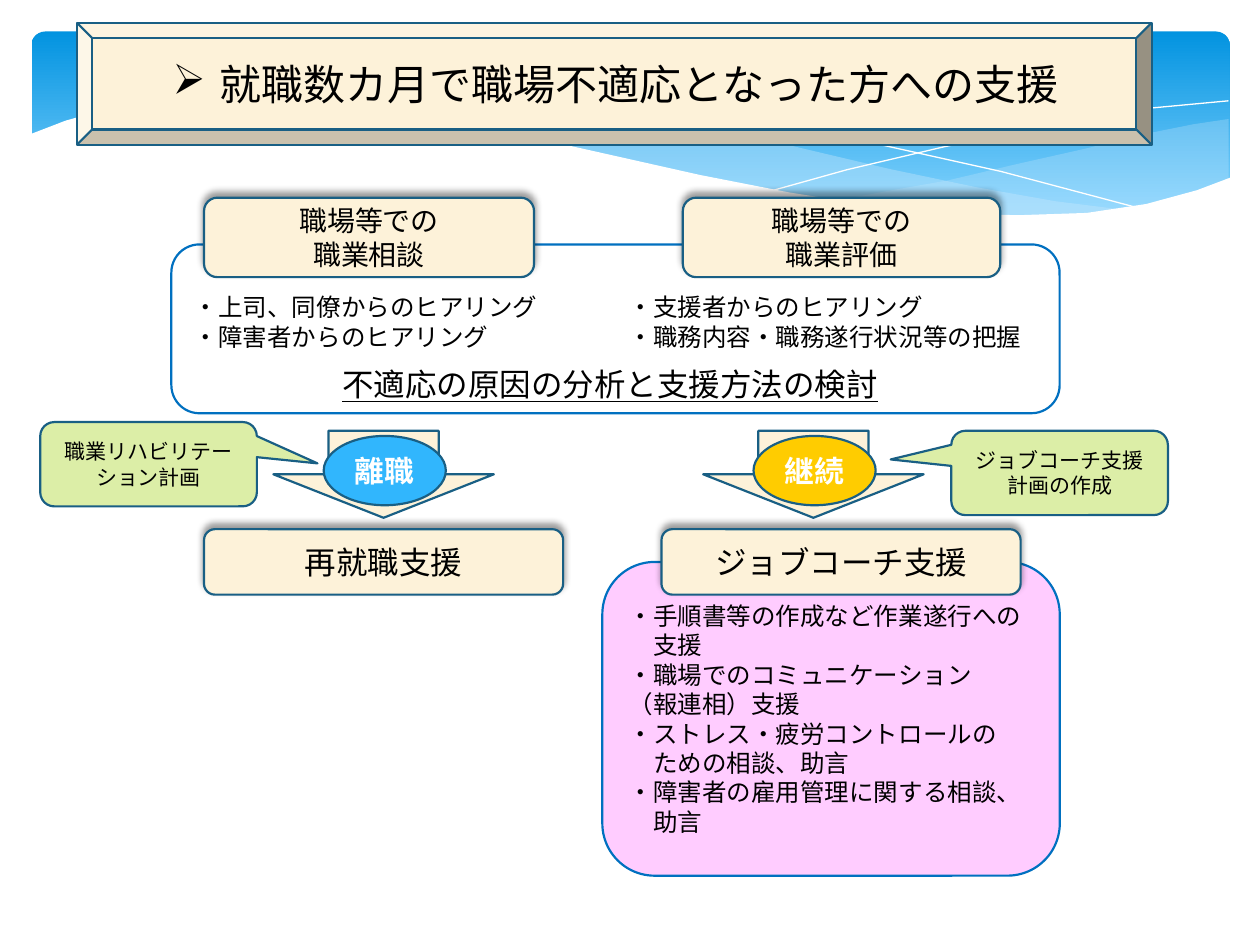
from lxml import etree
from pptx import Presentation
from pptx.dml.color import RGBColor
from pptx.enum import shapes, text
from pptx.oxml import ns
from pptx.util import Pt

FONT = "Noto Sans CJK JP"
CREAM, LIME, PINK, WHITE, BLACK = "FDF2D9", "DCEEA7", "FFCCFF", "FFFFFF", "000000"
OUTLINE, FRAME_LINE = "195F84", "0070C0"
KIND = shapes.MSO_SHAPE
CENTER, LEFT = text.PP_ALIGN.CENTER, text.PP_ALIGN.LEFT

# Every place is (left, top, width, height) in points.
TITLE = "就職数カ月で職場不適応となった方への支援"
BANNER = (18, 18, 684.7, 112.3)
RIGHT_WAVE = [
    (702, 68), (682, 71), (652, 77), (620, 85), (580, 94), (542, 103), (508, 109),
    (476, 115), (508, 118.8), (545, 122.4), (586, 123.8), (621, 122.4), (652, 117.4),
    (683, 109.5), (702, 102)]
MIDDLE_WAVE = [
    (643, 120), (603, 115), (558, 107), (508, 96.5), (453, 83.5), (420, 76), (390, 70),
    (361, 65), (318, 60), (274, 57.6), (236, 58), (206, 62), (233, 65), (261, 70),
    (291, 76), (323, 83.5), (382, 97), (433, 108), (468, 114), (510, 119.5),
    (557, 123.5), (596, 124.6), (631, 122.5)]
WAVE_LINES = [
    [(222.5, 65), (236, 62), (261, 59.5), (300, 58.5), (338, 59.8), (384, 63.4),
     (438, 70.6), (500, 82), (572, 98), (653, 119.5)],
    [(441, 109), (484, 97), (539, 84), (602, 71), (655, 62), (702, 57.6)]]
WHITE_WAVE = [
    (703, 101.5), (684, 108.7), (655, 116.6), (621, 121.7), (582, 123), (536, 122),
    (495, 117), (451, 110), (400, 100), (342, 87), (281, 73.4), (228, 63.4),
    (180, 58.3), (139, 56), (105, 57), (76, 60), (55, 64), (37.4, 69), (26, 73.4),
    (16.6, 77), (16.6, 161), (703, 161)]

ANALYSIS_FRAME = (97.9, 139.7, 507.6, 96.5)
COACHING_FRAME = (344.2, 321.1, 261.4, 179.3)
ANALYSIS_HEADINGS = [
    ((116.6, 113, 188.6, 45.4), ["職場等での", "職業相談"]),
    ((390.2, 113, 181.4, 45.4), ["職場等での", "職業評価"])]
SUPPORT_HEADINGS = [
    ((116.6, 302.4, 205.2, 37.4), ["再就職支援"]),
    ((378, 302.4, 205.2, 37.4), ["ジョブコーチ支援"])]
CALLOUTS = [  # left, top, tip x, tip y, words
    (23, 241.2, 0.78, -0.01, "職業リハビリテーション計画"),
    (543.6, 246.2, -0.78, -0.16, "ジョブコーチ支援計画の作成")]
OUTCOMES = [(156.2, "31B6FD", "離職"), (401.8, "FFCC00", "継続")]  # arrow left
NOTES = [
    ((352.1, 163.4, 244.8, 41),
     ["・支援者からのヒアリング", "・職務内容・職務遂行状況等の把握"]),
    ((103.7, 163.4, 239.8, 41),
     ["・上司、同僚からのヒアリング", "・障害者からのヒアリング"])]
CONCLUSION = "不適応の原因の分析と支援方法の検討"
COACHING = [  # words, continues the line above
    ("・手順書等の作成など作業遂行への", False), ("支援", True),
    ("・職場でのコミュニケーション", False), ("（報連相）支援", False),
    ("・ストレス・疲労コントロールの", False), ("ための相談、助言", True),
    ("・障害者の雇用管理に関する相談、", False), ("助言", True)]


def color(value):
    return RGBColor.from_string(value)


def add_xml(parent, tag, **attributes):
    return etree.SubElement(parent, ns.qn(tag), attributes)


def style(shape, fill=None, line=None, width=1.25, opacity=None):
    shape.shadow.inherit = False
    if fill:
        shape.fill.solid()
        shape.fill.fore_color.rgb = color(fill)
        if opacity:
            add_xml(shape.fill._xPr.solidFill[0], "a:alpha", val=str(opacity * 1000))
    else:
        shape.fill.background()
    if line:
        shape.line.color.rgb = color(line)
        shape.line.width = Pt(width)
    else:
        shape.line.fill.background()


def add_shape(slide, kind, place, fill=None, line=OUTLINE):
    shape = slide.shapes.add_shape(kind, *map(Pt, place))
    style(shape, fill, line)
    return shape


def add_curve(slide, points, closed=True, **look):
    start, *others = [(Pt(x), Pt(y)) for x, y in points]
    builder = slide.shapes.build_freeform(*start)
    builder.add_line_segments(others, close=closed)
    style(builder.convert_to_shape(), **look)


def write(shape, lines, size, align=CENTER, ink=BLACK, bold=None, underline=None):
    frame = shape.text_frame
    frame.word_wrap = True
    for index, words in enumerate(lines):
        paragraph = frame.add_paragraph() if index else frame.paragraphs[0]
        paragraph.alignment = align
        paragraph.line_spacing = Pt(size * 1.2)
        run = paragraph.add_run()
        run.text = words
        font = run.font
        font.name, font.size, font.bold, font.underline = FONT, Pt(size), bold, underline
        font.color.rgb = color(ink)
        add_xml(run._r.get_or_add_rPr(), "a:ea", typeface=FONT)
    return frame.paragraphs


def add_text(slide, place, lines, size, align=LEFT, **look):
    return write(slide.shapes.add_textbox(*map(Pt, place)), lines, size, align, **look)


def indent(paragraph, margin, first):
    properties = paragraph._p.get_or_add_pPr()
    properties.set("marL", str(Pt(margin)))
    properties.set("indent", str(Pt(first)))
    return properties


def add_heading(slide, place, lines, size):
    """Cream box with a soft shadow above it."""
    shape = add_shape(slide, KIND.ROUNDED_RECTANGLE, place, CREAM)
    effects = shape._element.spPr.find(ns.qn("a:effectLst"))
    shadow = add_xml(effects, "a:outerShdw", blurRad=str(Pt(4)), dist=str(Pt(3)),
                     dir=str(270 * 60000), rotWithShape="0")
    add_xml(add_xml(shadow, "a:srgbClr", val=BLACK), "a:alpha", val="40000")
    write(shape, lines, size)


def add_background(slide):
    banner = add_shape(slide, KIND.ROUNDED_RECTANGLE, BANNER, line=None)
    banner.adjustments[0] = 0.07
    banner.fill.gradient()
    banner.fill.gradient_angle = 270
    for stop, position, shade in zip(banner.fill.gradient_stops, (0, 0.9), ("0293E0", "83D3FE")):
        stop.position = position
        stop.color.rgb = color(shade)
    add_curve(slide, RIGHT_WAVE, fill="C6E7FC", opacity=29)
    add_curve(slide, MIDDLE_WAVE, fill="C6E7FC", opacity=40)
    for points in WAVE_LINES:
        add_curve(slide, points, closed=False, line=WHITE, width=0)
    add_curve(slide, WHITE_WAVE, fill=WHITE)


def add_title(slide):
    add_shape(slide, KIND.BEVEL, (43.9, 13, 614.2, 69.8), CREAM)
    paragraph = add_text(slide, (46.1, 30.2, 611.3, 36), [TITLE], 24, CENTER)[0]
    add_xml(indent(paragraph, 27, -27), "a:buChar", char="➢")


def main():
    presentation = Presentation()
    presentation.slide_width, presentation.slide_height = Pt(720), Pt(540)
    slide = presentation.slides.add_slide(presentation.slide_layouts[6])
    add_background(slide)
    add_title(slide)

    add_shape(slide, KIND.ROUNDED_RECTANGLE, ANALYSIS_FRAME, line=FRAME_LINE)
    add_shape(slide, KIND.ROUNDED_RECTANGLE, COACHING_FRAME, PINK, FRAME_LINE)
    for place, lines in ANALYSIS_HEADINGS:
        add_heading(slide, place, lines, 16)
    for place, lines in SUPPORT_HEADINGS:
        add_heading(slide, place, lines, 18)
    for place, lines in NOTES:
        add_text(slide, place, lines, 14)
    add_text(slide, (144.7, 205.2, 407.5, 28.8), [CONCLUSION], 18, CENTER, underline=True)

    for left, top, tip_x, tip_y, words in CALLOUTS:
        callout = add_shape(slide, KIND.ROUNDED_RECTANGULAR_CALLOUT,
                            (left, top, 123.8, 48.2), LIME)
        callout.adjustments[0], callout.adjustments[1] = tip_x, tip_y
        write(callout, [words], 12)
    for left, fill, words in OUTCOMES:
        add_shape(slide, KIND.DOWN_ARROW, (left, 246.2, 126, 49.7), CREAM)
        oval = add_shape(slide, KIND.OVAL, (left + 28.8, 249.1, 69.8, 39.6), fill)
        oval.text_frame.margin_left = oval.text_frame.margin_right = 0
        write(oval, [words], 17, ink=WHITE, bold=True)

    paragraphs = add_text(slide, (352.1, 339.8, 244.8, 159.8), [words for words, _ in COACHING], 14)
    for paragraph, (_, continues) in zip(paragraphs, COACHING):
        if continues:
            indent(paragraph, 14, 0)
    presentation.save("out.pptx")


if __name__ == "__main__":
    main()
